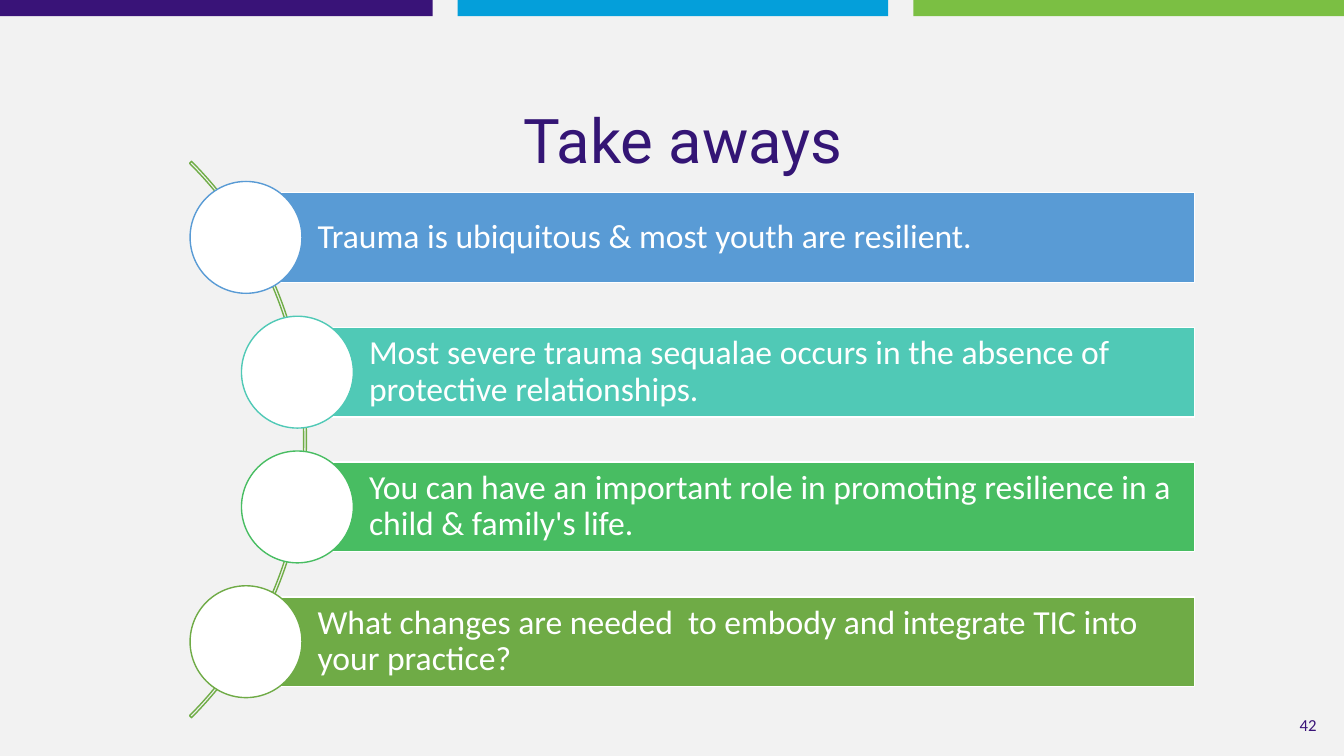
from lxml import etree
from pptx import Presentation
from pptx.dml.color import RGBColor
from pptx.enum.shapes import MSO_SHAPE
from pptx.enum.text import MSO_ANCHOR, PP_ALIGN
from pptx.oxml.ns import qn
from pptx.util import Inches, Pt

PAGE = RGBColor(0xF2, 0xF2, 0xF2)
WHITE = RGBColor(0xFF, 0xFF, 0xFF)
PURPLE = RGBColor(0x39, 0x13, 0x78)
TITLE_PURPLE = RGBColor(0x34, 0x15, 0x75)
CYAN = RGBColor(0x04, 0x9F, 0xDA)
LIME = RGBColor(0x7B, 0xBF, 0x43)
ARC_GREEN = RGBColor(0x70, 0xAD, 0x47)
BLUE = RGBColor(0x59, 0x9B, 0xD5)
TEAL = RGBColor(0x50, 0xC9, 0xB6)
GREEN = RGBColor(0x48, 0xBD, 0x62)
OLIVE = RGBColor(0x6F, 0xAB, 0x46)

prs = Presentation()
prs.slide_width = Inches(13.33)
prs.slide_height = Inches(7.5)
slide = prs.slides.add_slide(prs.slide_layouts[6])


def add_filled(kind, left, top, width, height, fill, line=None):
    shape = slide.shapes.add_shape(
        kind, Inches(left), Inches(top), Inches(width), Inches(height))
    shape.shadow.inherit = False
    shape.fill.solid()
    shape.fill.fore_color.rgb = fill
    if line is None:
        shape.line.fill.background()
    else:
        shape.line.color.rgb = line
        shape.line.width = Pt(1)


def add_label(text, left, top, width, height, size, font, color,
              align=PP_ALIGN.LEFT, inset=0.05, spacing=0.9, wrap=True):
    box = slide.shapes.add_textbox(
        Inches(left), Inches(top), Inches(width), Inches(height))
    frame = box.text_frame
    frame.word_wrap = wrap
    frame.vertical_anchor = MSO_ANCHOR.MIDDLE
    frame.margin_left = frame.margin_right = Inches(inset)
    frame.margin_top = frame.margin_bottom = Inches(inset)
    paragraph = frame.paragraphs[0]
    paragraph.alignment = align
    paragraph.line_spacing = spacing
    run = paragraph.add_run()
    run.text = text
    run.font.size = Pt(size)
    run.font.name = font
    run.font.color.rgb = color


add_filled(MSO_SHAPE.RECTANGLE, 0, 0, 13.33, 7.5, PAGE)
for left, width, color in [(0, 4.29, PURPLE), (4.54, 4.27, CYAN), (9.06, 4.27, LIME)]:
    add_filled(MSO_SHAPE.RECTANGLE, left, 0, width, 0.16, color)

add_label("42", 12.83, 7.06, 0.28, 0.27, 12, "Calibri", PURPLE,
          align=PP_ALIGN.RIGHT, spacing=1.0, wrap=False)
add_label("Take aways", 2.55, 0.98, 8.45, 0.88, 44, "Roboto", TITLE_PURPLE,
          align=PP_ALIGN.CENTER)

ARC_WIDTH = Inches(1.16)
outer_edge = [(1.9, 1.6), (3.42, 3.13), (3.42, 5.59), (1.9, 7.12)]
inner_edge = [(1.88, 7.1), (3.39, 5.59), (3.39, 3.13), (1.88, 1.62)]
arc_points = [(Inches(x), Inches(y)) for x, y in outer_edge + inner_edge]
builder = slide.shapes.build_freeform(*arc_points[0])
builder.add_line_segments(arc_points[1:], close=True)
arc = builder.convert_to_shape()
arc.shadow.inherit = False
arc.fill.background()
arc.line.color.rgb = ARC_GREEN
arc.line.width = Pt(1)
arc.width = ARC_WIDTH
outline = next(arc.element.iter(qn("a:path")))
outline.set("w", str(ARC_WIDTH))
segments = outline.findall(qn("a:lnTo"))
for curve_segments in (segments[:3], segments[4:7]):
    curve = etree.Element(qn("a:cubicBezTo"))
    curve_segments[0].addprevious(curve)
    for segment in curve_segments:
        curve.append(segment[0])
        outline.remove(segment)

takeaways = [
    ("Trauma is ubiquitous & most youth are resilient.", 2.44, 0.46, BLUE),
    ("Most severe trauma sequalae occurs in the absence of protective relationships.",
     2.95, 0.83, TEAL),
    ("You can have an important role in promoting resilience in a child & family's life.",
     2.95, 0.83, GREEN),
    ("What changes are needed  to embody and integrate TIC into your practice?",
     2.44, 0.83, OLIVE),
]
BAR_RIGHT, BAR_HEIGHT, DISC = 11.85, 0.89, 1.11
FIRST_MIDDLE, ROW_STEP = 2.355, 1.337

for row, (text, bar_left, text_height, color) in enumerate(takeaways):
    middle = FIRST_MIDDLE + row * ROW_STEP
    text_left = bar_left + 0.64
    add_filled(MSO_SHAPE.RECTANGLE, bar_left, middle - BAR_HEIGHT / 2,
               BAR_RIGHT - bar_left, BAR_HEIGHT, color, WHITE)
    add_label(text, text_left, middle - text_height / 2, BAR_RIGHT - text_left,
              text_height, 24, "Calibri", WHITE, inset=0.07)
    add_filled(MSO_SHAPE.OVAL, bar_left - DISC / 2, middle - DISC / 2,
               DISC, DISC, WHITE, color)

prs.save("out.pptx")
